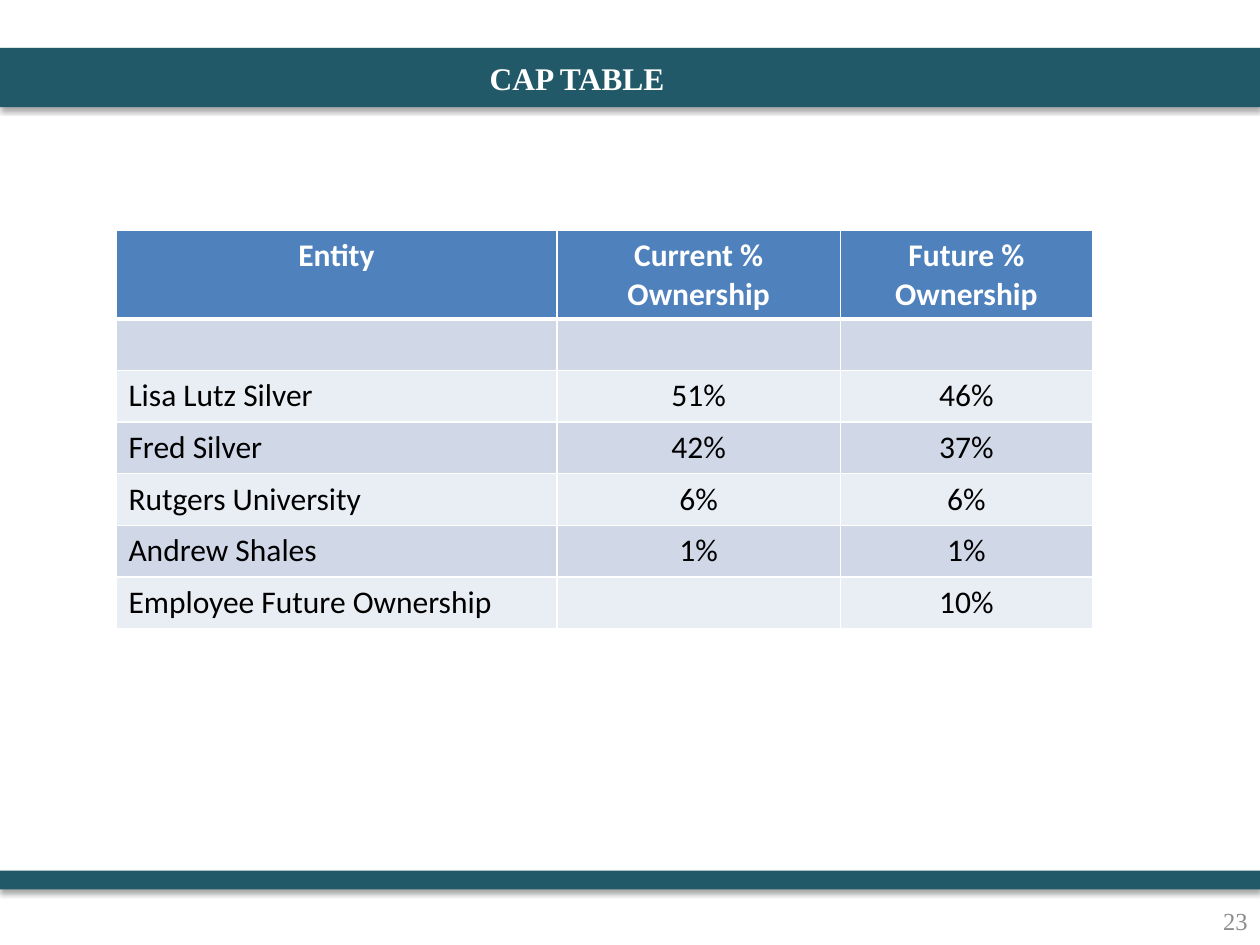
import dataclasses

import lxml.etree
import pptx
import pptx.dml.color
import pptx.enum.shapes
import pptx.enum.text
import pptx.oxml.ns
import pptx.util


@dataclasses.dataclass(frozen=True)
class Theme:
    bar: str = "215968"
    header: str = "4F81BD"
    band_dark: str = "D0D8E8"
    band_light: str = "E9EDF4"
    white: str = "FFFFFF"
    black: str = "000000"
    grey: str = "8C8C8C"
    heading_font: str = "Times New Roman"
    table_font: str = "Calibri"
    text_size: int = 18
    number_size: int = 14


THEME = Theme()
ALIGN = pptx.enum.text.PP_ALIGN
COLUMN_WIDTHS = (3.5, 2.25, 2)
ROW_HEIGHT = 0.41
BAR_TOP, BAR_HEIGHT = 0.38, 0.47
OWNERSHIP = (
    ("Entity", "Current % Ownership", "Future % Ownership"),
    ("", "", ""),
    ("Lisa Lutz Silver", "51%", "46%"),
    ("Fred Silver", "42%", "37%"),
    ("Rutgers University", "6%", "6%"),
    ("Andrew Shales", "1%", "1%"),
    ("Employee Future Ownership", "", "10%"),
)


def inches(*lengths):
    return [pptx.util.Inches(length) for length in lengths]


def color(value):
    return pptx.dml.color.RGBColor.from_string(value)


def add_element(parent, tag, **attributes):
    element = lxml.etree.SubElement(parent, pptx.oxml.ns.qn(tag))
    for name, value in attributes.items():
        element.set(name, str(value))
    return element


def write_text(frame, text, font, size, text_color, bold, alignment):
    frame.vertical_anchor = pptx.enum.text.MSO_ANCHOR.MIDDLE
    paragraph = frame.paragraphs[0]
    paragraph.alignment = alignment
    run = paragraph.add_run()
    run.text = text
    run.font.name = font
    run.font.size = pptx.util.Pt(size)
    run.font.bold = bold
    run.font.color.rgb = color(text_color)


def add_bar(slide, top, height):
    shape = slide.shapes.add_shape(
        pptx.enum.shapes.MSO_SHAPE.RECTANGLE, *inches(0, top, 10, height))
    shape.fill.solid()
    shape.fill.fore_color.rgb = color(THEME.bar)
    shape.line.fill.background()
    shape.shadow.inherit = False
    effects = shape.element.spPr.find(pptx.oxml.ns.qn("a:effectLst"))
    shadow = add_element(effects, "a:outerShdw", blurRad=pptx.util.Pt(3.1),
                         dist=pptx.util.Pt(1.8), dir=90 * 60000, rotWithShape=0)
    shadow_color = add_element(shadow, "a:srgbClr", val=THEME.black)
    add_element(shadow_color, "a:alpha", val=35000)


def add_title(slide, text):
    title = slide.shapes.title
    title.left, title.top, title.width, title.height = inches(
        0.27, BAR_TOP, 8.62, BAR_HEIGHT)
    title.text_frame.auto_size = pptx.enum.text.MSO_AUTO_SIZE.NONE
    write_text(title.text_frame, text, THEME.heading_font, THEME.text_size,
               THEME.white, True, ALIGN.CENTER)
    slide.shapes.element.append(title.element)


def add_slide_number(slide, text):
    box = slide.shapes.add_textbox(*inches(7.75, 7.11, 2.25, 0.4))
    box.text_frame.word_wrap = True
    write_text(box.text_frame, text, THEME.heading_font, THEME.number_size,
               THEME.grey, False, ALIGN.RIGHT)


def set_borders(cell, top, bottom):
    properties = cell._tc.get_or_add_tcPr()
    widths = {"a:lnL": 1, "a:lnR": 1, "a:lnT": top, "a:lnB": bottom}
    for tag, width in widths.items():
        line = add_element(properties, tag, w=pptx.util.Pt(width))
        fill = add_element(line, "a:solidFill")
        add_element(fill, "a:srgbClr", val=THEME.white)


def format_cell(cell, text, row, column):
    is_header = row == 0
    set_borders(cell, top=3 if row == 1 else 1, bottom=3 if is_header else 1)
    band = THEME.band_dark if row % 2 else THEME.band_light
    cell.fill.solid()
    cell.fill.fore_color.rgb = color(THEME.header if is_header else band)
    if text:
        centered = is_header or column > 0
        write_text(cell.text_frame, text, THEME.table_font, THEME.text_size,
                   THEME.white if is_header else THEME.black, is_header,
                   ALIGN.CENTER if centered else ALIGN.LEFT)
    cell.vertical_anchor = pptx.enum.text.MSO_ANCHOR.TOP


def add_ownership_table(slide):
    frame = slide.shapes.add_table(
        len(OWNERSHIP), len(COLUMN_WIDTHS),
        *inches(0.92, 1.83, sum(COLUMN_WIDTHS), ROW_HEIGHT * len(OWNERSHIP)))
    table = frame.table
    for column, width in zip(table.columns, COLUMN_WIDTHS):
        column.width = pptx.util.Inches(width)
    for row, texts in enumerate(OWNERSHIP):
        table.rows[row].height = pptx.util.Inches(ROW_HEIGHT)
        for column, text in enumerate(texts):
            format_cell(table.cell(row, column), text, row, column)


def main():
    presentation = pptx.Presentation()
    presentation.slide_width, presentation.slide_height = inches(10, 7.5)
    slide = presentation.slides.add_slide(presentation.slide_layouts[5])
    add_bar(slide, BAR_TOP, BAR_HEIGHT)
    add_bar(slide, 6.91, 0.15)
    add_slide_number(slide, "23")
    add_ownership_table(slide)
    add_title(slide, "CAP TABLE")
    presentation.save("out.pptx")


if __name__ == "__main__":
    main()
